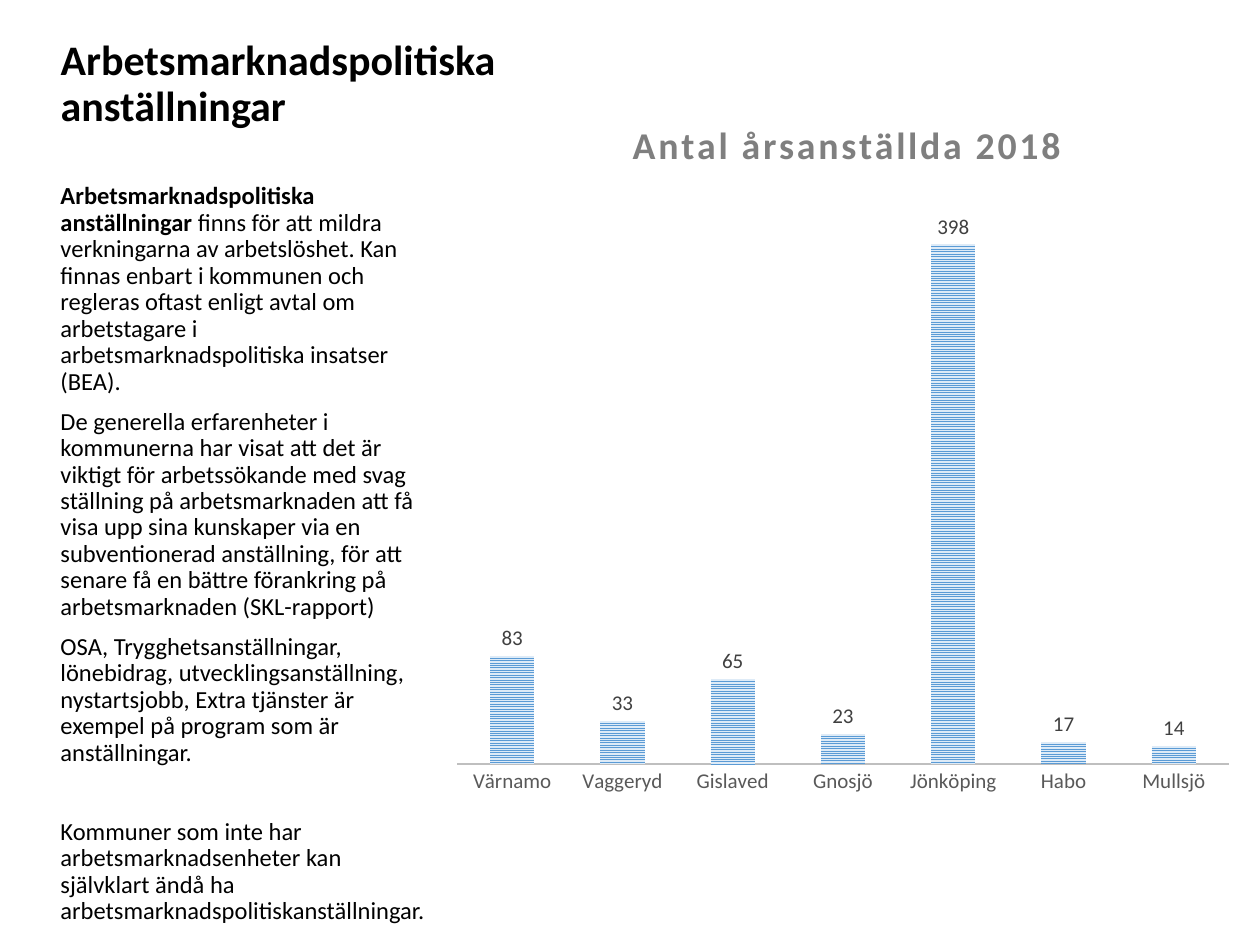
from dataclasses import dataclass

from lxml import etree
from pptx import Presentation
from pptx.chart.data import CategoryChartData
from pptx.dml.color import RGBColor
from pptx.enum.chart import XL_CHART_TYPE, XL_LABEL_POSITION, XL_TICK_MARK
from pptx.enum.dml import MSO_PATTERN
from pptx.enum.text import MSO_ANCHOR, PP_ALIGN
from pptx.oxml.ns import qn
from pptx.util import Pt

COLUMNS = XL_CHART_TYPE.COLUMN_CLUSTERED
OUTSIDE = XL_LABEL_POSITION.OUTSIDE_END
NO_TICKS = XL_TICK_MARK.NONE
STRIPES = MSO_PATTERN.NARROW_HORIZONTAL
BOTTOM, TOP = MSO_ANCHOR.BOTTOM, MSO_ANCHOR.TOP
LEFT = PP_ALIGN.LEFT


@dataclass(frozen=True)
class Theme:
    font: str = "Calibri"
    text: str = "000000"
    chart_title: str = "7F7F7F"
    category: str = "595959"
    value: str = "404040"
    axis: str = "BFBFBF"
    bar: str = "5B9BD5"
    bar_back: str = "DEEBF7"
    title_size: float = 24
    body_size: float = 14
    chart_title_size: float = 21.6
    label_size: float = 12


def rgb(value):
    return RGBColor.from_string(value)


class SlideBuilder:
    def __init__(self, slide, theme):
        self.s = slide
        self.theme = theme

    def style(self, font, size, color, bold=False):
        font.name = self.theme.font
        font.size = Pt(size)
        font.bold = bold
        font.color.rgb = rgb(color)

    def title(self, text, x, y, w, h):
        sp = self.s.shapes.title
        sp.left, sp.top, sp.width, sp.height = Pt(x), Pt(y), Pt(w), Pt(h)
        tf = sp.text_frame
        tf.word_wrap = True
        tf.vertical_anchor = BOTTOM
        p = tf.paragraphs[0]
        p.text = text
        p.alignment = LEFT
        p.line_spacing = 0.9
        self.style(p.font, self.theme.title_size, self.theme.text, True)

    def body(self, paragraphs, x, y, w, h, inset_top):
        """Each paragraph is (space before, bold lead, text)."""
        tf = self.s.shapes.add_textbox(Pt(x), Pt(y), Pt(w), Pt(h)).text_frame
        tf.word_wrap = True
        tf.vertical_anchor = TOP
        tf.margin_top = Pt(inset_top)
        for i, (before, lead, text) in enumerate(paragraphs):
            p = tf.add_paragraph() if i else tf.paragraphs[0]
            p.line_spacing = 0.9
            p.space_before = Pt(before)
            self.style(p.font, self.theme.body_size, self.theme.text)
            if lead:
                r = p.add_run()
                r.text = lead
                r.font.bold = True
            p.add_run().text = text

    def place(self, parent, **layout):
        """Give a chart part a fixed place, as fractions of the chart."""
        for old in parent.findall(qn("c:layout")):
            parent.remove(old)
        node = etree.Element(qn("c:layout"))
        manual = etree.SubElement(node, qn("c:manualLayout"))
        for tag, val in layout.items():
            etree.SubElement(manual, qn("c:" + tag)).set("val", str(val))
        text = parent.find(qn("c:tx"))
        parent.insert(0 if text is None else 1, node)

    def column_chart(self, title, values, x, y, w, h, maximum):
        t = self.theme
        data = CategoryChartData(number_format="0")
        data.categories = list(values)
        data.add_series("Series 1", list(values.values()))
        chart = self.s.shapes.add_chart(COLUMNS, Pt(x), Pt(y), Pt(w), Pt(h), data).chart
        self.style(chart.font, 10, t.text)
        chart.has_legend = False

        # Chart title
        chart.has_title = True
        p = chart.chart_title.text_frame.paragraphs[0]
        r = p.add_run()
        r.text = title
        self.style(r.font, t.chart_title_size, t.chart_title, True)
        r.font._element.set("spc", "150")
        self.place(chart.chart_title._element, xMode="edge", yMode="edge", x=0.23, y=0.04)

        # Axes
        axis = chart.category_axis
        axis.major_tick_mark = axis.minor_tick_mark = NO_TICKS
        axis.format.line.color.rgb = rgb(t.axis)
        axis.format.line.width = Pt(1.5)
        self.style(axis.tick_labels.font, t.label_size, t.category)
        scale = chart.value_axis
        scale.visible = False
        scale.has_major_gridlines = False
        scale.minimum_scale, scale.maximum_scale = 0, maximum

        # Columns and value labels
        plot = chart.plots[0]
        plot.vary_by_categories = False
        plot.gap_width, plot.overlap = 150, -25
        fill = plot.series[0].format.fill
        fill.patterned()
        fill.pattern = STRIPES
        fill.fore_color.rgb = rgb(t.bar)
        fill.back_color.rgb = rgb(t.bar_back)
        plot.has_data_labels = True
        labels = plot.data_labels
        labels.show_value = True
        labels.position = OUTSIDE
        self.style(labels.font, t.label_size, t.value)
        self.place(chart._chartSpace.chart.plotArea, layoutTarget="inner",
                   xMode="edge", yMode="edge", x=0.02, y=0.13, w=0.96, h=0.81)


PARAGRAPHS = [
    (0, "Arbetsmarknadspolitiska anställningar ",
     "finns för att mildra verkningarna av arbetslöshet. Kan finnas enbart i kommunen "
     "och regleras oftast enligt avtal om arbetstagare i arbetsmarknadspolitiska "
     "insatser (BEA)."),
    (7.5, "",
     "De generella erfarenheter i kommunerna har visat att det är viktigt för "
     "arbetssökande med svag ställning på arbetsmarknaden att få visa upp sina "
     "kunskaper via en subventionerad anställning, för att senare få en bättre "
     "förankring på arbetsmarknaden (SKL-rapport)"),
    (7.5, "",
     "OSA, Trygghetsanställningar, lönebidrag, utvecklingsanställning, nystartsjobb, "
     "Extra tjänster är exempel på program som är anställningar."),
    (30, "",
     "Kommuner som inte har arbetsmarknadsenheter kan självklart ändå ha "
     "arbetsmarknadspolitiskanställningar."),
]
EMPLOYED = {"Värnamo": 83, "Vaggeryd": 33, "Gislaved": 65, "Gnosjö": 23,
            "Jönköping": 398, "Habo": 17, "Mullsjö": 14}


def main():
    prs = Presentation()
    prs.slide_width, prs.slide_height = Pt(720), Pt(540)
    title_only = prs.slide_layouts[5]
    page = SlideBuilder(prs.slides.add_slide(title_only), Theme())
    page.title("Arbetsmarknadspolitiska anställningar", 27.5, 18, 268.5, 60)
    page.body(PARAGRAPHS, 27.5, 78, 224.5, 453, inset_top=27)
    page.column_chart("Antal årsanställda 2018", EMPLOYED, 252, 47, 459.5, 414.5, maximum=450)
    prs.save("out.pptx")


if __name__ == "__main__":
    main()
